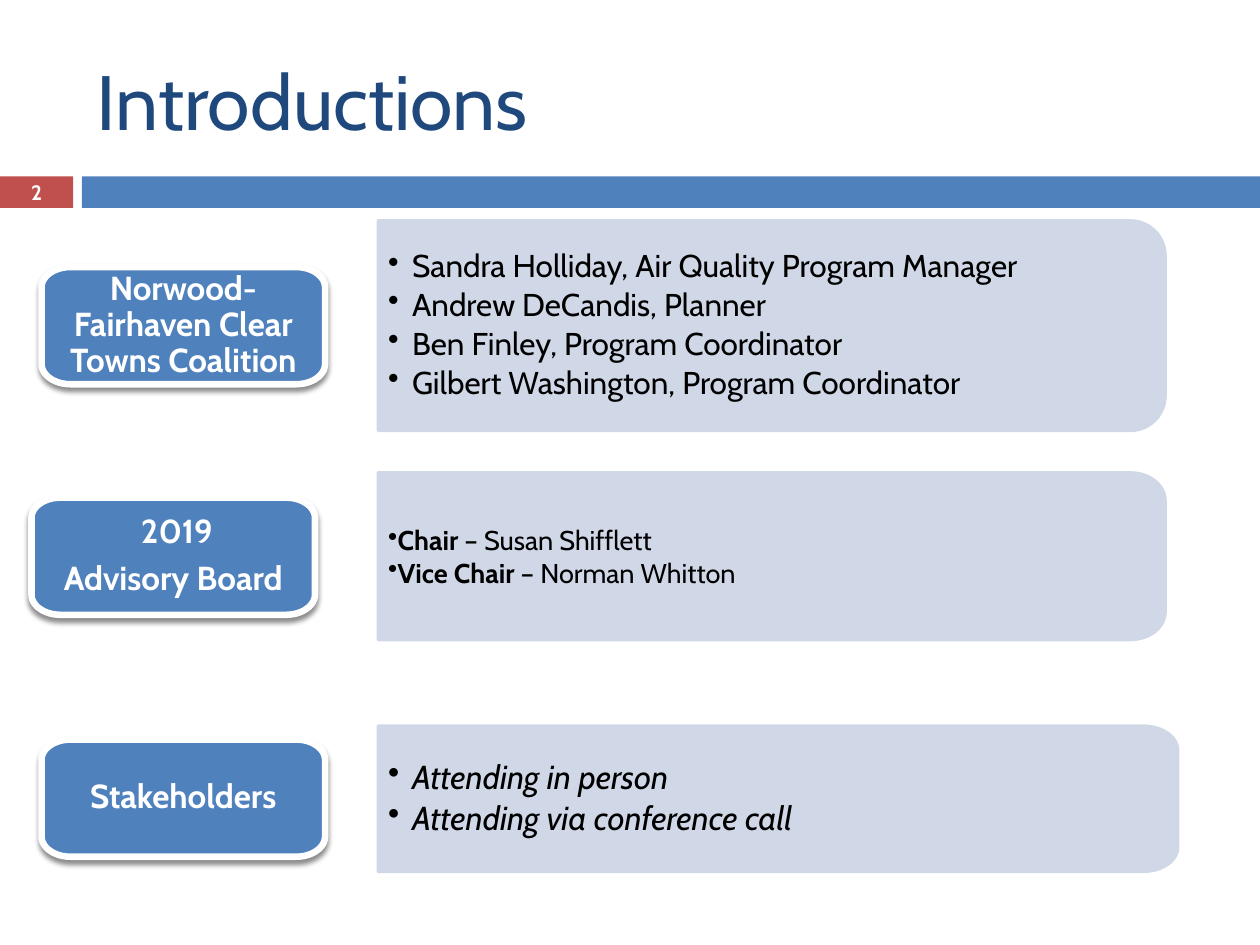
from dataclasses import dataclass
from math import cos, pi, sin

from lxml.etree import SubElement
from pptx import Presentation
from pptx.dml.color import RGBColor
from pptx.enum.shapes import MSO_SHAPE
from pptx.enum.text import MSO_ANCHOR, PP_ALIGN
from pptx.oxml.ns import qn
from pptx.util import Inches, Pt


@dataclass(frozen=True)
class Theme:
    font: str = "Cabin"
    title_color: str = "1F497D"
    accent: str = "4F81BD"
    number_fill: str = "C0504D"
    panel: str = "D0D8E8"
    light: str = "FFFFFF"
    dark: str = "000000"
    title_size: float = 44
    number_size: float = 11.9
    label_size: float = 19
    staff_size: float = 18
    board_size: float = 15.5
    stakeholder_size: float = 19


def add_element(parent, tag, **attributes):
    element = SubElement(parent, qn(tag))
    for name, value in attributes.items():
        element.set(name, str(value))
    return element


def set_bullet(paragraph, indent):
    properties = paragraph._p.get_or_add_pPr()
    properties.set("marL", str(Inches(indent)))
    properties.set("indent", str(-Inches(indent)))
    add_element(properties, "a:buChar", char="•")


def add_shadow(shape):
    effects = shape._element.spPr.find(qn("a:effectLst"))
    shadow = add_element(effects, "a:outerShdw", blurRad=Pt(3), dist=Pt(2.4),
                         dir=90 * 60000, algn="ctr", rotWithShape=0)
    color = add_element(shadow, "a:srgbClr", val="000000")
    add_element(color, "a:alpha", val=45000)


def write_text(shape, paragraphs, *, font, size, color, bold=False, italic=False,
               align=PP_ALIGN.LEFT, line_spacing=1.0, space_after=0,
               bullet_indent=None, margins=(0.1, 0.05, 0.1, 0.05)):
    """Fill a shape; a paragraph is a string or a list of (text, bold) runs."""
    frame = shape.text_frame
    frame.word_wrap = True
    frame.vertical_anchor = MSO_ANCHOR.MIDDLE
    (frame.margin_left, frame.margin_top,
     frame.margin_right, frame.margin_bottom) = map(Inches, margins)
    for index, content in enumerate(paragraphs):
        paragraph = frame.add_paragraph() if index else frame.paragraphs[0]
        paragraph.alignment = align
        paragraph.line_spacing = line_spacing
        paragraph.space_after = Pt(space_after)
        if bullet_indent is not None:
            set_bullet(paragraph, bullet_indent)
        runs = [(content, bold)] if isinstance(content, str) else content
        for text, run_bold in runs:
            run = paragraph.add_run()
            run.text = text
            run.font.name = font
            run.font.size = Pt(size)
            run.font.bold = run_bold
            run.font.italic = italic
            run.font.color.rgb = RGBColor.from_string(color)


def rounded_outline(left, top, width, height, radius_x, radius_y, right_only, steps=12):
    """Points of a box whose corners are quarter ellipses, clockwise from top left."""
    points = []
    for corner, (side_x, side_y) in enumerate([(0, 0), (1, 0), (1, 1), (0, 1)]):
        corner_x, corner_y = left + side_x * width, top + side_y * height
        if right_only and side_x == 0:
            points.append((corner_x, corner_y))
            continue
        center_x = corner_x + radius_x * (1 - 2 * side_x)
        center_y = corner_y + radius_y * (1 - 2 * side_y)
        for step in range(steps + 1):
            angle = pi + (corner + step / steps) * pi / 2
            points.append((center_x + radius_x * cos(angle),
                           center_y + radius_y * sin(angle)))
    return [(Inches(x), Inches(y)) for x, y in points]


class SlideBuilder:
    def __init__(self, slide, theme):
        self.slide = slide
        self.theme = theme

    def style(self, shape, fill, line=None, line_width=0):
        shape.shadow.inherit = False
        shape.fill.solid()
        shape.fill.fore_color.rgb = RGBColor.from_string(fill)
        if line:
            shape.line.color.rgb = RGBColor.from_string(line)
            shape.line.width = Pt(line_width)
        else:
            shape.line.fill.background()

    def text_box(self, text, left, top, width, height, **text_format):
        box = self.slide.shapes.add_textbox(*map(Inches, (left, top, width, height)))
        write_text(box, [text], font=self.theme.font, **text_format)

    def bar(self, left, width, fill):
        shape = self.slide.shapes.add_shape(
            MSO_SHAPE.RECTANGLE, *map(Inches, (left, 1.4, width, 0.25)))
        self.style(shape, fill)

    def rounded_box(self, *box, radius_x, radius_y, right_only=False):
        points = rounded_outline(*box, radius_x, radius_y, right_only)
        builder = self.slide.shapes.build_freeform(*points[0])
        builder.add_line_segments(points[1:], close=True)
        return builder.convert_to_shape()

    def panel(self, top, width, height, paragraphs, **text_format):
        theme = self.theme
        shape = self.rounded_box(3, top, width, height, radius_x=0.28,
                                 radius_y=height / 6, right_only=True)
        self.style(shape, theme.panel, theme.panel, 1.5)
        write_text(shape, paragraphs, font=theme.font, color=theme.dark,
                   margins=(0.08, 0.1, 0.14, 0.1), **text_format)

    def spaced_panel(self, top, width, height, paragraphs, size, italic=False):
        """Add a panel whose bullets are indented and set apart."""
        self.panel(top, width, height, paragraphs, size=size, italic=italic,
                   line_spacing=0.9, space_after=0.15 * size, bullet_indent=0.19)

    def label(self, left, top, paragraphs):
        theme = self.theme
        shape = self.rounded_box(left, top, 2.25, 0.93, radius_x=0.23, radius_y=0.16)
        self.style(shape, theme.accent, theme.light, 3.75)
        add_shadow(shape)
        write_text(shape, paragraphs, font=theme.font, size=theme.label_size,
                   color=theme.light, bold=True, align=PP_ALIGN.CENTER,
                   line_spacing=0.9, space_after=0.35 * theme.label_size,
                   margins=(0.15, 0.11, 0.15, 0.11))


def main():
    presentation = Presentation()
    presentation.slide_width, presentation.slide_height = Inches(10), Inches(7.5)
    theme = Theme()
    slide = SlideBuilder(presentation.slides.add_slide(presentation.slide_layouts[6]), theme)

    slide.bar(0, 0.58, theme.number_fill)
    slide.bar(0.65, 9.35, theme.accent)
    slide.text_box("Introductions", 0.67, 0.25, 8.92, 1.08,
                   size=theme.title_size, color=theme.title_color)
    slide.text_box("2", 0, 1.39, 0.58, 0.27, size=theme.number_size,
                   color=theme.light, bold=True, align=PP_ALIGN.CENTER)

    slide.spaced_panel(1.75, 6.25, 1.67, [
        "Sandra Holliday, Air Quality Program Manager",
        "Andrew DeCandis, Planner",
        "Ben Finley, Program Coordinator",
        "Gilbert Washington, Program Coordinator",
    ], theme.staff_size)
    slide.label(0.33, 2.12, ["Norwood-Fairhaven Clear Towns Coalition"])

    slide.panel(3.75, 6.25, 1.33, [
        [("Chair", True), (" – Susan Shifflett", False)],
        [("Vice Chair ", True), ("– Norman Whitton", False)],
    ], size=theme.board_size, bullet_indent=0)
    slide.label(0.25, 3.95, [" 2019", "Advisory Board"])

    slide.spaced_panel(5.76, 6.35, 1.16,
                       ["Attending in person", "Attending via conference call"],
                       theme.stakeholder_size, italic=True)
    slide.label(0.33, 5.87, ["Stakeholders"])

    presentation.save("out.pptx")


if __name__ == "__main__":
    main()
